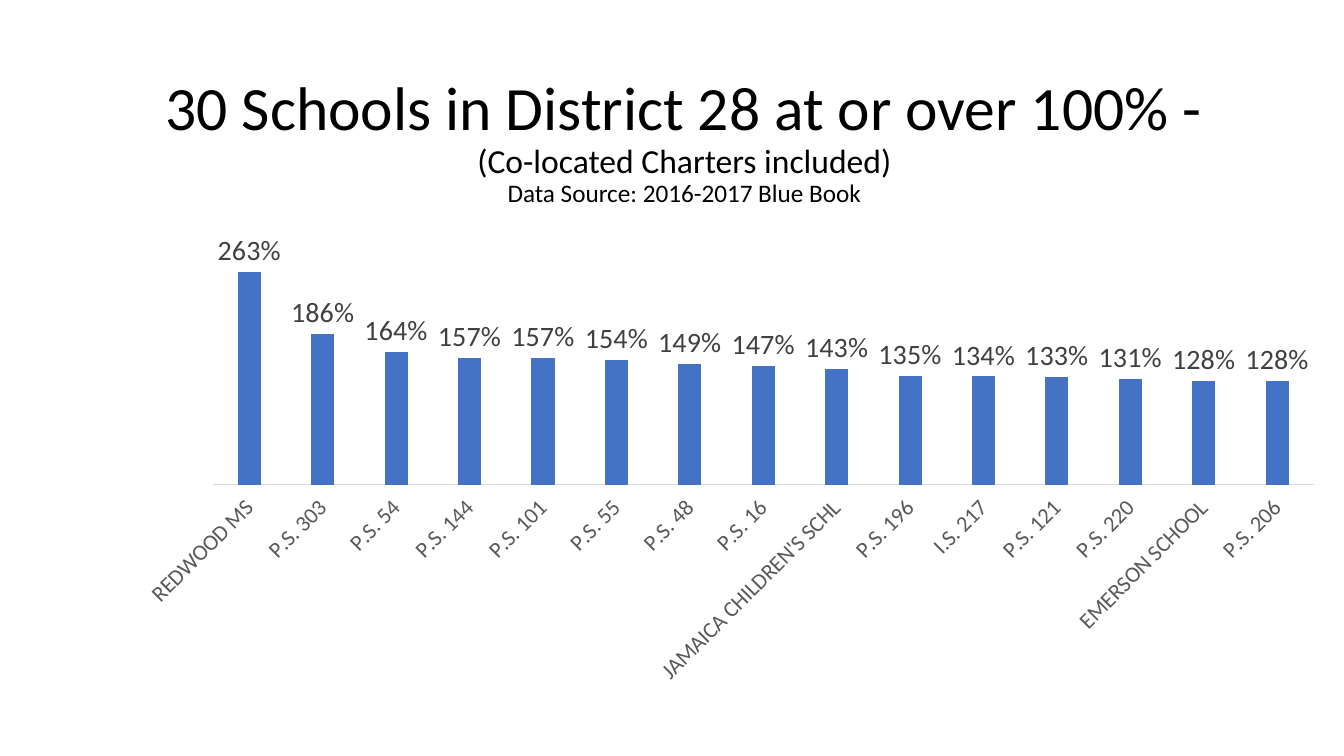
from typing import Any, NamedTuple

from lxml import etree
from pptx import Presentation
from pptx.chart.axis import ValueAxis
from pptx.chart.chart import Chart
from pptx.chart.data import CategoryChartData
from pptx.chart.plot import BarPlot
from pptx.dml.color import RGBColor
from pptx.enum.chart import XL_CHART_TYPE, XL_LABEL_POSITION, XL_TICK_LABEL_POSITION, XL_TICK_MARK
from pptx.enum.text import MSO_ANCHOR, PP_ALIGN
from pptx.oxml.ns import qn
from pptx.slide import Slide
from pptx.text.text import Font
from pptx.util import Pt

COLUMNS = XL_CHART_TYPE.COLUMN_CLUSTERED
OUTSIDE_END = XL_LABEL_POSITION.OUTSIDE_END
LOW = XL_TICK_LABEL_POSITION.LOW
NO_TICK = XL_TICK_MARK.NONE
MIDDLE = MSO_ANCHOR.MIDDLE
CENTER = PP_ALIGN.CENTER

BLACK = RGBColor(0x00, 0x00, 0x00)
BAR_BLUE = RGBColor(0x44, 0x72, 0xC4)
LABEL_GREY = RGBColor(0x40, 0x40, 0x40)
AXIS_GREY = RGBColor(0x59, 0x59, 0x59)
LINE_GREY = RGBColor(0xD9, 0xD9, 0xD9)

FONT_NAME = "Calibri"
PERCENT = "0%"
LABEL_ROTATION = "-2700000"  # 45 degrees upwards, in 60000ths of a degree


class TitleLine(NamedTuple):
    text: str
    size: float


class School(NamedTuple):
    name: str
    utilization: float


TITLE_LINES = [
    TitleLine("30 Schools in District 28 at or over 100% -", 44),
    TitleLine("(Co-located Charters included)", 24),
    TitleLine("Data Source: 2016-2017 Blue Book", 18),
]

SCHOOLS = [
    School("REDWOOD MS", 2.63),
    School("P.S. 303", 1.86),
    School("P.S. 54", 1.64),
    School("P.S. 144", 1.57),
    School("P.S. 101", 1.57),
    School("P.S. 55", 1.54),
    School("P.S. 48", 1.49),
    School("P.S. 16", 1.47),
    School("JAMAICA CHILDREN'S SCHL", 1.43),
    School("P.S. 196", 1.35),
    School("I.S. 217", 1.34),
    School("P.S. 121", 1.33),
    School("P.S. 220", 1.31),
    School("EMERSON SCHOOL", 1.28),
    School("P.S. 206", 1.28),
]

PLOT_LAYOUT = {
    "layoutTarget": "inner",
    "xMode": "edge",
    "yMode": "edge",
    "x": 0.127,
    "y": 0.031,
    "w": 0.873,
    "h": 0.497,
}


def set_attributes(target: Any, values: dict[str, Any]) -> None:
    for name, value in values.items():
        setattr(target, name, value)


def format_font(font: Font, size: float, color: RGBColor) -> None:
    set_attributes(font, {"name": FONT_NAME, "size": Pt(size), "bold": False})
    font.color.rgb = color


def add_title(slide: Slide, lines: list[TitleLine]) -> None:
    box = slide.shapes.add_textbox(Pt(74.88), Pt(49.68), Pt(828), Pt(104.4))
    frame = box.text_frame
    set_attributes(frame, {"word_wrap": True, "vertical_anchor": MIDDLE})
    para = frame.paragraphs[0]
    set_attributes(para, {"alignment": CENTER, "line_spacing": 0.9})
    for index, line in enumerate(lines):
        if index:
            para.add_line_break()
        span = para.add_run()
        span.text = line.text
        format_font(span.font, line.size, BLACK)


def place_plot(chart: Chart) -> None:
    """Fix the inner plot area as fractions of the chart frame."""
    plot_area = chart.element.xpath(".//c:plotArea")[0]
    for old_layout in plot_area.findall(qn("c:layout")):
        plot_area.remove(old_layout)
    layout = etree.Element(qn("c:layout"))
    manual = etree.SubElement(layout, qn("c:manualLayout"))
    for name, value in PLOT_LAYOUT.items():
        etree.SubElement(manual, qn(f"c:{name}")).set("val", str(value))
    plot_area.insert(0, layout)


def format_category_axis(chart: Chart) -> None:
    axis = chart.category_axis
    set_attributes(axis, {
        "major_tick_mark": NO_TICK,
        "minor_tick_mark": NO_TICK,
        "tick_label_position": LOW,
        "has_major_gridlines": False,
    })
    format_font(axis.tick_labels.font, 16, AXIS_GREY)
    axis.format.line.color.rgb = LINE_GREY
    axis.format.line.width = Pt(0.75)
    body = chart.element.xpath(".//c:catAx/c:txPr/a:bodyPr")[0]
    body.set("rot", LABEL_ROTATION)
    body.set("vert", "horz")


def format_value_axis(axis: ValueAxis) -> None:
    set_attributes(axis, {
        "minimum_scale": 0,
        "maximum_scale": 3,
        "has_major_gridlines": False,
        "visible": False,
    })


def format_columns(plot: BarPlot) -> None:
    set_attributes(plot, {
        "gap_width": 219,
        "overlap": -27,
        "vary_by_categories": False,
        "has_data_labels": True,
    })
    labels = plot.data_labels
    set_attributes(labels, {
        "show_value": True,
        "position": OUTSIDE_END,
        "number_format": PERCENT,
        "number_format_is_linked": False,
    })
    format_font(labels.font, 20, LABEL_GREY)
    fill = plot.series[0].format.fill
    fill.solid()
    fill.fore_color.rgb = BAR_BLUE


def add_school_chart(slide: Slide, schools: list[School]) -> None:
    data = CategoryChartData(number_format=PERCENT)
    data.categories = [school.name for school in schools]
    data.add_series("Series 1", [school.utilization for school in schools])
    frame = slide.shapes.add_chart(
        COLUMNS, Pt(37.44), Pt(162), Pt(901.44), Pt(349.2), data
    )
    chart = frame.chart
    set_attributes(chart, {"has_title": False, "has_legend": False})
    format_font(chart.font, 10, BLACK)
    format_category_axis(chart)
    format_value_axis(chart.value_axis)
    format_columns(chart.plots[0])
    place_plot(chart)


def main() -> None:
    deck = Presentation()
    set_attributes(deck, {"slide_width": Pt(960), "slide_height": Pt(540)})
    page = deck.slides.add_slide(deck.slide_layouts[6])
    add_title(page, TITLE_LINES)
    add_school_chart(page, SCHOOLS)
    deck.save("out.pptx")


if __name__ == "__main__":
    main()
